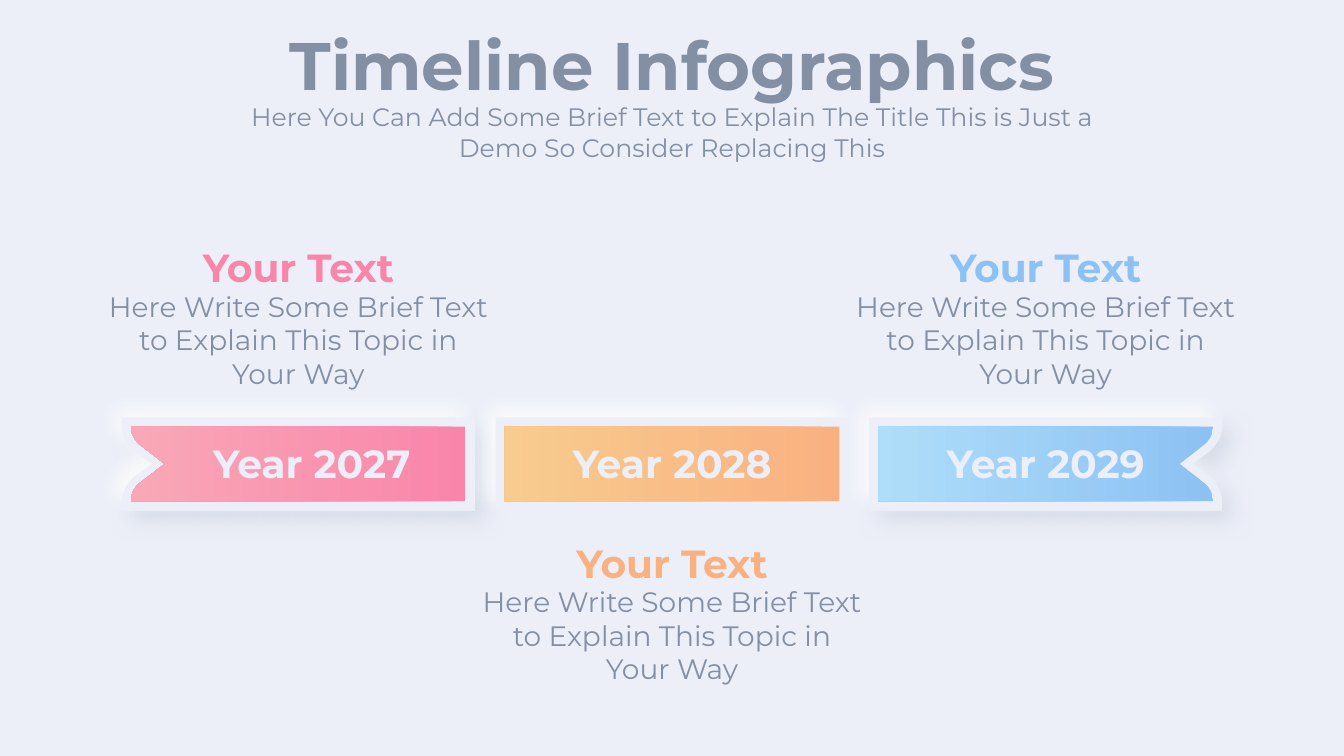
from lxml import etree
from pptx import Presentation
from pptx.dml.color import RGBColor
from pptx.enum.shapes import MSO_SHAPE
from pptx.enum.text import MSO_ANCHOR, MSO_AUTO_SIZE, PP_ALIGN
from pptx.oxml.ns import qn
from pptx.util import Inches, Pt

RECT = MSO_SHAPE.RECTANGLE
CENTER = PP_ALIGN.CENTER
TOP = MSO_ANCHOR.TOP
NO_AUTOFIT = MSO_AUTO_SIZE.NONE

FONT = "Montserrat"
PAPER, INK = "ECEFF8", "838FA3"
DARK_SHADOW, LIGHT_SHADOW = ("D1D9E6", 45), ("FFFFFF", 225)

# Lengths are percentages of the slide's width (x) and height (y)
COLUMN_CENTRES = (22.2, 50, 77.8)
BAND_MIDDLE = 61.36
PLATE, PANEL = (26.25, 12.33), (24.9, 9.87)
# Upper half of a ribbon's tail: Bezier points, then depth of the notch
PLATE_TAIL = ((0, 1.2), (0, 2.53), (0.45, 3.87), (1.05, 4.67)), 2.25
PANEL_TAIL = ((0, 0), (0, 1.07), (0.3, 2), (0.75, 2.53)), 2.5

# Column, year, gradient, heading top, body top, year offset, tail side
STEPS = (
    (0, "Year 2027", ("FF598A", "FF8A9C"), 31.47, 37.6, 1, -1),
    (2, "Year 2029", ("64AEF2", "95D7FA"), 31.47, 37.6, 0, 1),
    (1, "Year 2028", ("FF974F", "FEBD61"), 70.67, 76.67, 0, 0),
)


def rgb(value):
    return RGBColor.from_string(value)


def bezier(points, steps=12):
    """Points along a cubic curve."""
    for i in range(steps + 1):
        t = i / steps
        weights = (1 - t) ** 3, 3 * t * (1 - t) ** 2, 3 * t * t * (1 - t), t ** 3
        yield tuple(sum(k * p[axis] for k, p in zip(weights, points))
                    for axis in (0, 1))


class Deck:
    def __init__(self):
        self.prs = Presentation()
        self.prs.slide_width, self.prs.slide_height = Inches(13.33), Inches(7.5)
        self.s = self.prs.slides.add_slide(self.prs.slide_layouts[0])
        self.s.background.fill.solid()
        self.s.background.fill.fore_color.rgb = rgb(PAPER)

    def x(self, share):
        return round(self.prs.slide_width * share / 100)

    def y(self, share):
        return round(self.prs.slide_height * share / 100)

    def box(self, cx, top, w, h):
        return self.x(cx - w / 2), self.y(top), self.x(w), self.y(h)

    def paint(self, fill, element, color):
        """Solid for one colour, translucent gradient for a pair."""
        if isinstance(color, str):
            fill.solid()
            fill.fore_color.rgb = rgb(color)
            return
        fill.gradient()
        fill.gradient_angle = 180
        for stop, value in zip(fill.gradient_stops, color):
            stop.color.rgb = rgb(value)
        for clr in element.iter(qn("a:srgbClr")):
            etree.SubElement(clr, qn("a:alpha"), val="70000")

    def add_text(self, sp, text, size, color, bold=False):
        tf = sp.text_frame
        tf.word_wrap = True
        tf.auto_size = NO_AUTOFIT
        tf.vertical_anchor = TOP
        p = tf.paragraphs[0]
        p.alignment = CENTER
        p.space_before = Pt(0)
        r = p.add_run()
        r.text = text
        r.font.name, r.font.size, r.font.bold = FONT, Pt(size), bold
        self.paint(r.font.fill, r._r, color)

    def placeholder(self, index, place, *style):
        sp = self.s.placeholders[index]
        sp.left, sp.top, sp.width, sp.height = self.box(*place)
        self.add_text(sp, *style)

    def label(self, place, *style):
        self.add_text(self.s.shapes.add_textbox(*self.box(*place)), *style)

    def finish(self, sp, color, shadow):
        sp.shadow.inherit = False
        sp.line.fill.background()
        self.paint(sp.fill, sp._element.spPr, color)
        if shadow:
            tint, angle = shadow
            effects = sp._element.spPr.find(qn("a:effectLst"))
            outer = etree.SubElement(
                effects, qn("a:outerShdw"), blurRad=str(Pt(15)),
                dist=str(Pt(10)), dir=str(angle * 60000), rotWithShape="0")
            clr = etree.SubElement(outer, qn("a:srgbClr"), val=tint)
            etree.SubElement(clr, qn("a:alpha"), val="80000")

    def rect(self, cx, size, color, shadow=None):
        w, h = size
        place = self.box(cx, BAND_MIDDLE - h / 2, w, h)
        self.finish(self.s.shapes.add_shape(RECT, *place), color, shadow)

    def ribbon(self, cx, size, tail, side, color, shadow=None):
        w, h = size
        curve, depth = tail
        upper = [(0, 0), *bezier(curve)]
        lower = [(px, h - py) for px, py in reversed(upper)]
        outline = [(w, 0), *upper, (depth, h / 2), *lower, (w, h)]
        points = [(self.x(cx + side * (w / 2 - px)),
                   self.y(BAND_MIDDLE - h / 2 + py)) for px, py in outline]
        builder = self.s.shapes.build_freeform(*points[0], scale=1.0)
        builder.add_line_segments(points[1:], close=True)
        self.finish(builder.convert_to_shape(), color, shadow)


def main():
    d = Deck()

    # Title and subtitle
    d.placeholder(0, (50, 2.4, 65.5, 12.13), "Timeline Infographics", 48, INK, True)
    d.placeholder(1, (50, 12.8, 65.5, 9.47),
                  "Here You Can Add Some Brief Text to Explain The Title "
                  "This is Just a Demo So Consider Replacing This", 18, INK)

    # Descriptions above and below the band
    for column, _, colors, head_top, body_top, _, _ in STEPS:
        cx = COLUMN_CENTRES[column]
        d.label((cx, head_top, 24.75, 7.6), "Your Text", 28, colors, True)
        d.label((cx, body_top, 29.85, 14.8),
                "Here Write Some Brief Text to Explain This Topic in Your Way",
                20, INK)

    # Band of years
    for column, year, colors, _, _, offset, side in STEPS:
        cx = COLUMN_CENTRES[column]
        if side:
            for shadow in (DARK_SHADOW, LIGHT_SHADOW):
                d.ribbon(cx, PLATE, PLATE_TAIL, side, PAPER, shadow)
            d.ribbon(cx, PANEL, PANEL_TAIL, side, colors)
        else:
            d.rect(cx, PLATE, PAPER, LIGHT_SHADOW)
            d.rect(cx, PANEL, colors)
        d.label((cx + offset, 57.47, 19.65, 7.6), year, 28, PAPER, True)

    d.prs.save("out.pptx")


if __name__ == "__main__":
    main()
